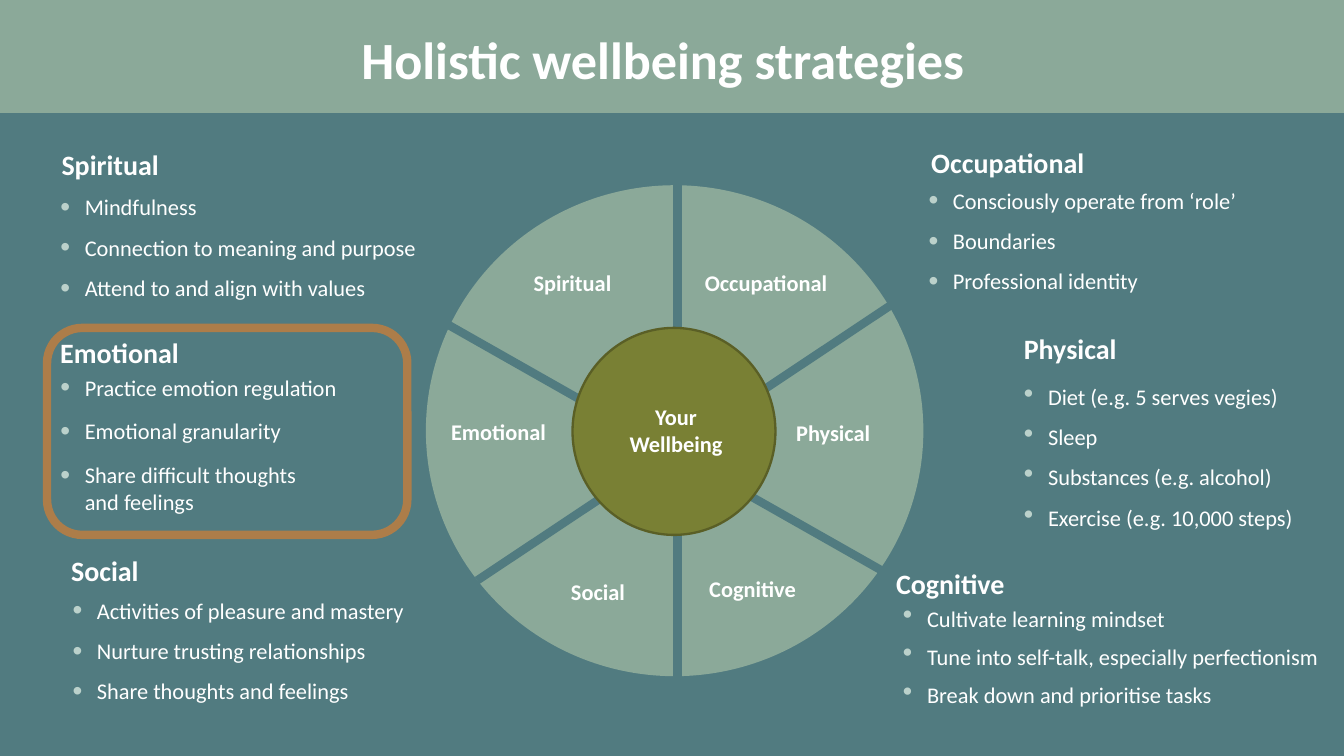
from lxml.etree import SubElement
from pptx import Presentation
from pptx.dml.color import RGBColor
from pptx.enum.shapes import MSO_CONNECTOR, MSO_SHAPE
from pptx.enum.text import MSO_ANCHOR, MSO_AUTO_SIZE, PP_ALIGN
from pptx.oxml.ns import qn
from pptx.util import Pt

RECTANGLE, ROUNDED, OVAL = MSO_SHAPE.RECTANGLE, MSO_SHAPE.ROUNDED_RECTANGLE, MSO_SHAPE.OVAL
STRAIGHT = MSO_CONNECTOR.STRAIGHT
TOP, NO_FIT = MSO_ANCHOR.TOP, MSO_AUTO_SIZE.NONE
LEFT, CENTER = PP_ALIGN.LEFT, PP_ALIGN.CENTER

THEME = {
    "font": "Calibri",
    "text": "FFFFFF", "background": "517B80", "sage": "8BA999", "bullet": "BBD1CB",
    "olive": "798034", "olive_edge": "5A5F26", "highlight": "AD7D49",
    "title": 28, "heading": 15, "body": 12,
    "thick": 4.5, "thin": 1.25, "indent": 13,
}

OPEN = {"line_spacing": 1.5}
SPACED_BEFORE = {"space_before": Pt(9)}
SPACED_AFTER = {"space_after": Pt(6)}

# All boxes are left, top, width, height in points.
TITLE = ("Holistic wellbeing strategies", (121, 10.8, 468, 41))
BAND = (0, 0, 720, 59.8)
WHEEL = (230.4, 101.5, 262, 258.5)
HUB = (306.7, 175.7, 108.7, 110.9)
HUB_LABEL = ("Your Wellbeing", (323.3, 212.4, 77.8, 44))
SPOKES = [(362.9, 92.9, 362.9, 369.4), (230.4, 168.5, 473, 306), (490.3, 154.8, 255.6, 311)]
HIGHLIGHT = (25.2, 175.7, 193, 110.9)
LABEL_SIZE = (111, 26.6)
HEADING_SIZE = (158, 25)

# name, label centre x and top, heading left and top, list box, spacing, items
STRATEGIES = [
    ("Spiritual", (306.7, 140.4), (25.9, 75.6), (25.2, 92.9, 227, 78), OPEN,
     ["Mindfulness", "Connection to meaning and purpose", "Attend to and align with values"]),
    ("Emotional", (267.1, 220.3), (25.2, 176.4), (25.2, 196.6, 176.4, 86), SPACED_BEFORE,
     ["Practice emotion regulation", "Emotional granularity",
      "Share difficult thoughts\vand feelings"]),
    ("Social", (320.4, 306), (31, 293), (31.7, 308.9, 227, 48), OPEN,
     ["Activities of pleasure and mastery", "Nurture trusting relationships",
      "Share thoughts and feelings"]),
    ("Occupational", (410.4, 140.4), (491.8, 74.2), (490.3, 89.3, 227, 48), OPEN,
     ["Consciously operate from ‘role’", "Boundaries", "Professional identity"]),
    ("Physical", (446.4, 221), (541.4, 174.2), (541.4, 194.4, 227, 48), OPEN,
     ["Diet (e.g. 5 serves vegies)", "Sleep", "Substances (e.g. alcohol)",
      "Exercise (e.g. 10,000 steps)"]),
    ("Cognitive", (403.2, 304.6), (473, 300.2), (476.6, 320.4, 240.5, 74), SPACED_AFTER,
     ["Cultivate learning mindset", "Tune into self-talk, especially perfectionism",
      "Break down and prioritise tasks"]),
]


def color(name):
    return RGBColor.from_string(THEME[name])


def place(box, area):
    box.left, box.top, box.width, box.height = map(Pt, area)


def add_shape(page, kind, area, fill, line, weight):
    shape = page.shapes.add_shape(kind, *map(Pt, area))
    shape.shadow.inherit = False
    if fill:
        shape.fill.solid()
        shape.fill.fore_color.rgb = color(fill)
    else:
        shape.fill.background()
    shape.line.color.rgb = color(line)
    shape.line.width = Pt(THEME[weight])
    return shape


def add_spoke(page, ends):
    spoke = page.shapes.add_connector(STRAIGHT, *map(Pt, ends))
    spoke.line.color.rgb = color("background")
    spoke.line.width = Pt(THEME["thick"])
    SubElement(spoke.element.spPr, qn("a:effectLst"))


def add_bullet(para):
    properties = para._p.get_or_add_pPr()
    properties.set("marL", str(Pt(THEME["indent"])))
    properties.set("indent", str(-Pt(THEME["indent"])))
    bullet_color = SubElement(properties, qn("a:buClr"))
    SubElement(bullet_color, qn("a:srgbClr"), val=THEME["bullet"])
    SubElement(properties, qn("a:buSzPct"), val="125000")
    SubElement(properties, qn("a:buChar"), char="•")


def write(box, lines, size, bold=True, align=CENTER, spacing=None, bulleted=False):
    frame = box.text_frame
    frame.word_wrap, frame.auto_size, frame.vertical_anchor = True, NO_FIT, TOP
    font = {"name": THEME["font"], "size": Pt(THEME[size]), "bold": bold}
    paragraph_format = {"alignment": align, "line_spacing": 1.0,
                        "space_before": Pt(0), "space_after": Pt(0)} | (spacing or {})
    for index, line in enumerate(lines):
        para = frame.add_paragraph() if index else frame.paragraphs[0]
        para.text = line
        for key, value in paragraph_format.items():
            setattr(para, key, value)
        if index == 0:
            para.space_before = Pt(0)
        if bulleted:
            add_bullet(para)
        for span in para.runs:
            for key, value in font.items():
                setattr(span.font, key, value)
            span.font.color.rgb = color("text")
        for line_break in para._p.findall(qn("a:br")):
            SubElement(line_break, qn("a:rPr"), sz=str(THEME[size] * 100))


def add_text(page, area, text, size, align=CENTER):
    write(page.shapes.add_textbox(*map(Pt, area)), [text], size, align=align)


def main():
    deck = Presentation()
    deck.slide_width, deck.slide_height = Pt(720), Pt(405)
    page = deck.slides.add_slide(deck.slide_layouts.get_by_name("Comparison"))
    page.background.fill.solid()
    page.background.fill.fore_color.rgb = color("background")

    title = page.shapes.title
    bodies = [box for box in page.placeholders if box.placeholder_format.idx]
    band = add_shape(page, RECTANGLE, BAND, "sage", "sage", "thin")
    title.element.addprevious(band.element)
    place(title, TITLE[1])
    write(title, [TITLE[0]], "title")

    add_shape(page, OVAL, WHEEL, "sage", "sage", "thick")
    for ends in SPOKES:
        add_spoke(page, ends)
    add_shape(page, OVAL, HUB, "olive", "olive_edge", "thin")
    add_text(page, HUB_LABEL[1], HUB_LABEL[0], "body")

    for name, (center, top), heading, area, spacing, items in STRATEGIES:
        add_text(page, (center - LABEL_SIZE[0] / 2, top, *LABEL_SIZE), name, "body")
        add_text(page, (*heading, *HEADING_SIZE), name, "heading", LEFT)
        # The layout offers four body placeholders; further lists get text boxes.
        box = bodies.pop(0) if bodies else page.shapes.add_textbox(0, 0, 0, 0)
        place(box, area)
        write(box, items, "body", False, LEFT, spacing, bulleted=True)

    frame = add_shape(page, ROUNDED, HIGHLIGHT, None, "highlight", "thick")
    frame.adjustments[0] = 0.17

    deck.save("out.pptx")


if __name__ == "__main__":
    main()
